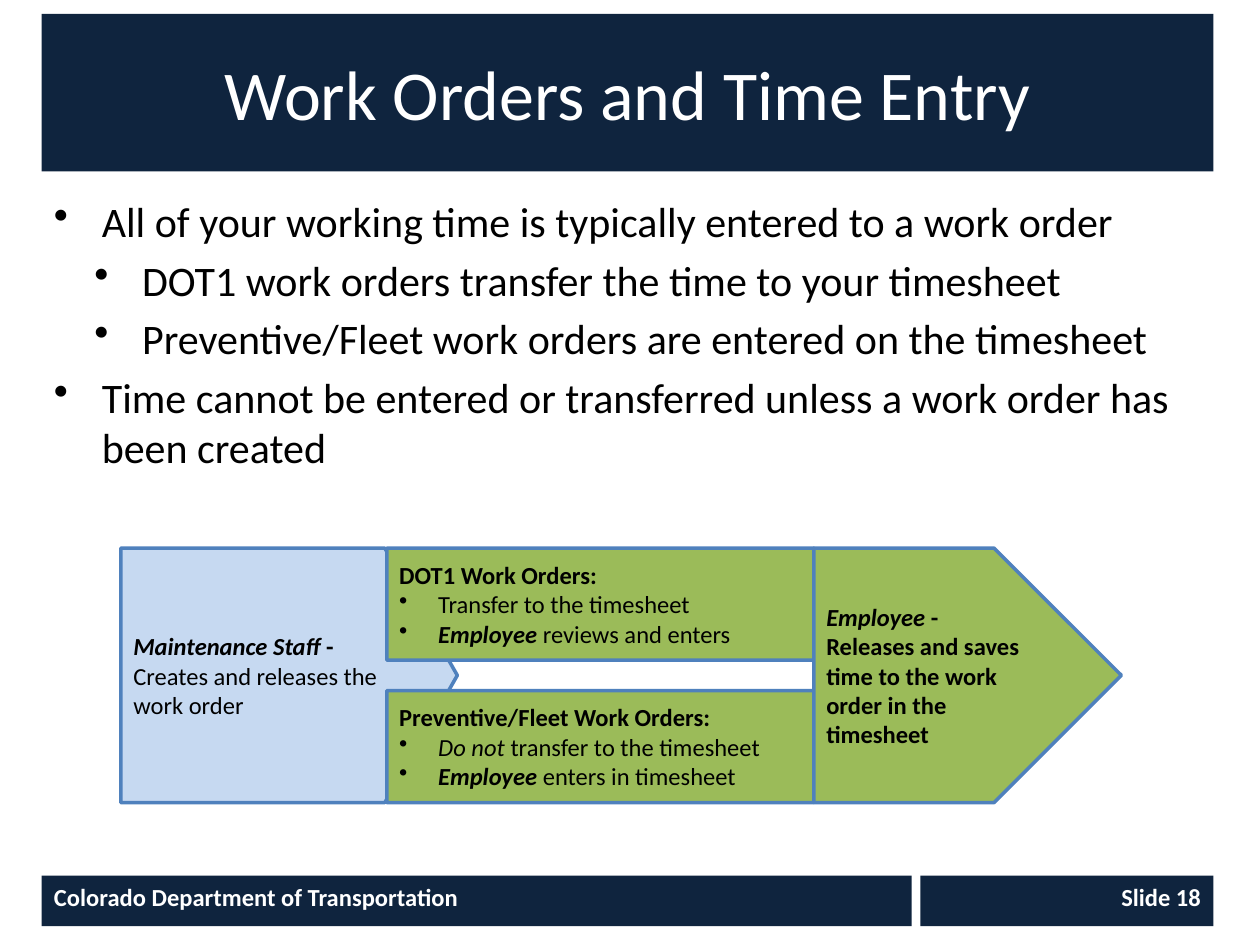
import pptx
import pptx.dml.color
import pptx.enum.shapes
import pptx.enum.text
import pptx.oxml
import pptx.util
from collections import namedtuple

Box = namedtuple("Box", "left top width height")
SHAPES = pptx.enum.shapes.MSO_SHAPE
ALIGN = pptx.enum.text.PP_ALIGN
ANCHOR = pptx.enum.text.MSO_ANCHOR
COLORS = {
    "navy": "0F243E",
    "white": "FFFFFF",
    "black": "000000",
    "pale": "C6D9F1",
    "green": "9BBB59",
    "outline": "4F81BD",
}
FONT = "Calibri"
UNIT = pptx.util.Inches(0.1)
COLUMNS, ROWS = 100, 75
MARGIN, CONTENT = 3.3, 93


def color(name):
    return pptx.dml.color.RGBColor.from_string(COLORS[name])


def place(shape, box):
    shape.left, shape.top, shape.width, shape.height = (round(side * UNIT) for side in box)


def add_block(page, kind, box, fill, line=None):
    shape = page.shapes.add_shape(kind, *(round(side * UNIT) for side in box))
    shape.shadow.inherit = False
    shape.fill.solid()
    shape.fill.fore_color.rgb = color(fill)
    if line:
        shape.line.color.rgb = color(line)
        shape.line.width = pptx.util.Pt(2)
    else:
        shape.line.fill.background()
    return shape


def style_span(span, size, ink, marks=""):
    span.font.name = FONT
    span.font.size = pptx.util.Pt(size)
    span.font.color.rgb = color(ink)
    span.font.bold = "b" in marks
    span.font.italic = "i" in marks


def add_bullet(para, indent, hang):
    properties = para._p.get_or_add_pPr()
    properties.set("marL", str(pptx.util.Inches(indent)))
    properties.set("indent", str(-pptx.util.Inches(hang)))
    bullet = pptx.oxml.parse_xml(
        '<a:buChar xmlns:a="http://schemas.openxmlformats.org/drawingml/2006/main" char="•"/>'
    )
    properties.append(bullet)


def write_line(para, text, size, ink, align=ALIGN.LEFT, marks=""):
    para.text = text
    para.alignment = align
    for span in para.runs:
        style_span(span, size, ink, marks)


def next_para(frame, index):
    return frame.add_paragraph() if index else frame.paragraphs[0]


def draw_title(page, box, text):
    title = page.shapes.title
    place(title, box)
    title.fill.solid()
    title.fill.fore_color.rgb = color("navy")
    title.text_frame.vertical_anchor = ANCHOR.MIDDLE
    write_line(title.text_frame.paragraphs[0], text, 40, "white", ALIGN.CENTER)


def draw_bullets(page, box, lines):
    body = page.shapes.add_textbox(0, 0, 0, 0)
    place(body, box)
    frame = body.text_frame
    frame.word_wrap = True
    for index, (indent, text) in enumerate(lines):
        para = next_para(frame, index)
        write_line(para, text, 24, "black")
        para.space_before = pptx.util.Pt(24 * 0.2)
        add_bullet(para, indent, 0.38)


def draw_footer(page, box, owner, number):
    gap, number_width = 0.7, box.width / 4
    owner_width = box.width - number_width - gap
    parts = (
        (box.left, owner_width, owner, ALIGN.LEFT),
        (box.left + owner_width + gap, number_width, number, ALIGN.RIGHT),
    )
    for left, width, text, align in parts:
        bar = add_block(page, SHAPES.RECTANGLE, Box(left, box.top, width, box.height), "navy")
        bar.text_frame.vertical_anchor = ANCHOR.TOP
        write_line(bar.text_frame.paragraphs[0], text, 14, "white", align, "b")


def draw_step(page, box, fill, lines, point=0.5):
    step = add_block(page, SHAPES.PENTAGON, box, fill, "outline")
    step.adjustments[0] = point
    frame = step.text_frame
    frame.word_wrap = True
    frame.vertical_anchor = ANCHOR.MIDDLE
    for index, (bulleted, spans) in enumerate(lines):
        para = next_para(frame, index)
        para.alignment = ALIGN.LEFT
        if bulleted:
            add_bullet(para, 0.31, 0.31)
        for text, marks in spans:
            span = para.add_run()
            span.text = text
            style_span(span, 14, "black", marks)


def draw_flow(page, box, staff, branches, employee):
    staff_width, branch_width, employee_width = 26.7, 38.3, 24.4
    branch_left = box.left + 21.1
    branch_height = box.height * 0.44
    draw_step(page, Box(box.left, box.top, staff_width, box.height), "pale", staff, 0.285)
    for index, lines in enumerate(branches):
        top = box.top + index * (box.height - branch_height)
        draw_step(page, Box(branch_left, top, branch_width, branch_height), "green", lines)
    employee_left = box.left + box.width - employee_width
    draw_step(page, Box(employee_left, box.top, employee_width, box.height), "green", employee)


def main():
    deck = pptx.Presentation()
    deck.slide_width, deck.slide_height = COLUMNS * UNIT, ROWS * UNIT
    page = deck.slides.add_slide(deck.slide_layouts[5])
    draw_title(page, Box(MARGIN, 1.1, CONTENT, 12.5), "Work Orders and Time Entry")
    draw_bullets(page, Box(MARGIN, 15, CONTENT, 27.8), [
        (0.38, "All of your working time is typically entered to a work order"),
        (0.7, "DOT1 work orders transfer the time to your timesheet"),
        (0.7, "Preventive/Fleet work orders are entered on the timesheet"),
        (0.38, "Time cannot be entered or transferred unless a work order has been created"),
    ])
    draw_footer(page, Box(MARGIN, 69.5, CONTENT, 4),
                "Colorado Department of Transportation", "Slide 18")
    staff = [
        (False, [("Maintenance Staff", "bi"), (" -", "b")]),
        (False, [("Creates and releases the work order", "")]),
    ]
    branches = [
        [
            (False, [("DOT1 Work Orders:", "b")]),
            (True, [("Transfer to the timesheet", "")]),
            (True, [("Employee", "bi"), (" reviews and enters", "")]),
        ],
        [
            (False, [("Preventive/Fleet Work Orders:", "b")]),
            (True, [("Do not ", "i"), ("transfer to the timesheet", "")]),
            (True, [("Employee", "bi"), (" enters in timesheet", "")]),
        ],
    ]
    employee = [
        (False, [("Employee", "bi"), (" -", "b")]),
        (False, [("Releases and saves time to the work order in the timesheet", "b")]),
    ]
    draw_flow(page, Box(9.6, 43.5, 79.4, 20.2), staff, branches, employee)
    deck.save("out.pptx")


if __name__ == "__main__":
    main()
